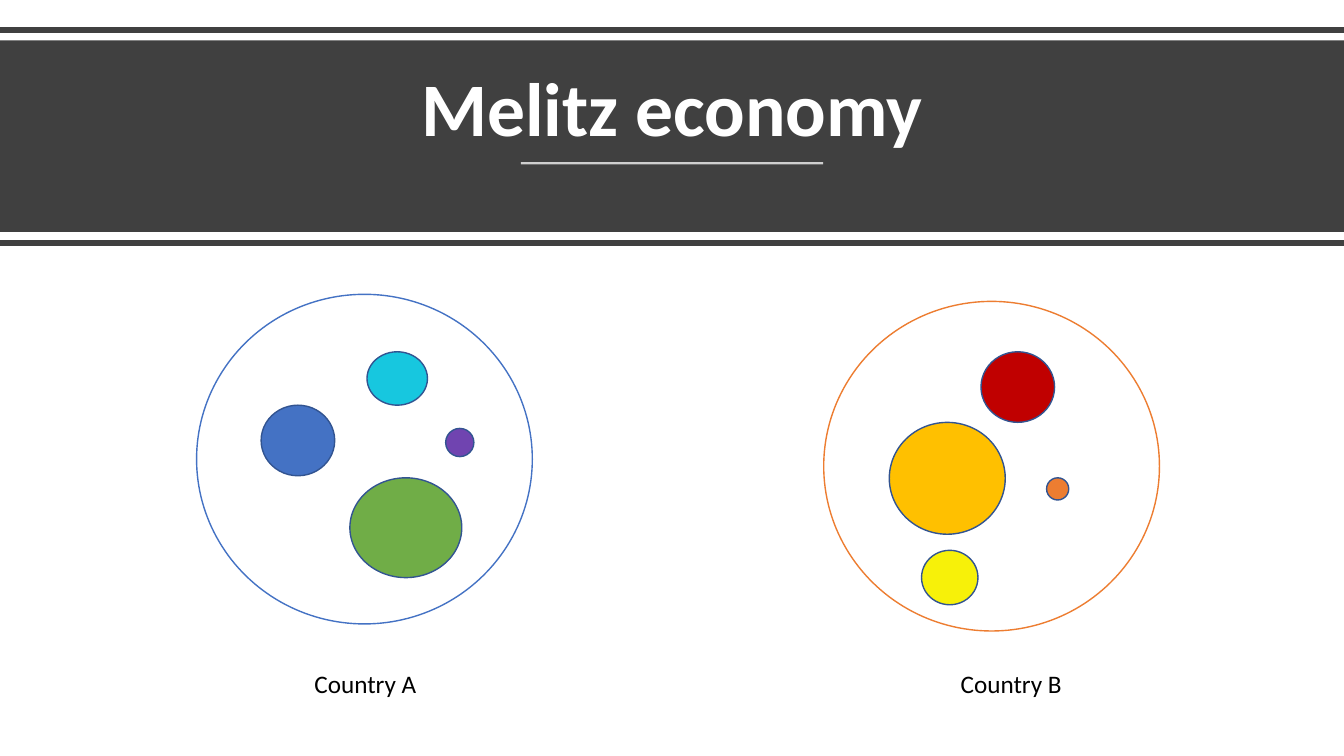
"""Build the Melitz economy slide: two countries with firms of different sizes."""
from lxml import etree
from pptx import Presentation
from pptx.dml.color import RGBColor
from pptx.enum.shapes import MSO_CONNECTOR, MSO_SHAPE
from pptx.enum.text import MSO_ANCHOR, PP_ALIGN
from pptx.oxml.ns import qn
from pptx.util import Inches, Pt

STRAIGHT = MSO_CONNECTOR.STRAIGHT
RECT, OVAL = MSO_SHAPE.RECTANGLE, MSO_SHAPE.OVAL
BOTTOM, TOP = MSO_ANCHOR.BOTTOM, MSO_ANCHOR.TOP
CENTER, LEFT = PP_ALIGN.CENTER, PP_ALIGN.LEFT

TITLE = "Melitz economy"
COUNTRIES = [
    {
        "label": "Country A", "label_left": 3.02,
        "border": (1.95, 2.92), "color": "4472C4",
        "firms": [
            (2.59, 4.02, 0.73, 0.7, "4472C4"),
            (3.64, 3.49, 0.6, 0.53, "17C7DF"),
            (3.47, 4.74, 1.11, 0.99, "70AD47"),
            (4.42, 4.25, 0.28, 0.28, "7044B0"),
        ],
    },
    {
        "label": "Country B", "label_left": 9.43,
        "border": (8.17, 2.99), "color": "ED7D31",
        "firms": [
            (8.82, 4.19, 1.15, 1.11, "FFC000"),
            (10.38, 4.74, 0.22, 0.22, "ED7D31"),
            (9.73, 3.49, 0.73, 0.7, "C00000"),
            (9.14, 5.46, 0.56, 0.54, "F7F109"),
        ],
    },
]
THEME = {
    "font": "Calibri", "title_size": 54, "label_size": 18,
    "band": "404040", "light": "FFFFFF", "text": "000000",
    "firm_line": "325491", "thin": 1, "rule": 1.5, "thick": 4,
}
WIDTH, HEIGHT = 13.33, 7.5
BAND_TOP, BAND_HEIGHT = 0.4, 1.9
EDGE_YS = (0.3, 2.41)
RULE_WIDTH, RULE_Y = 3, 1.62
BORDER_SIZE = (3.33, 3.27)
LABEL_TOP, LABEL_SIZE = 6.58, (2.07, 0.4)


def add_shape(s, kind, box, fill=None, line=None):
    sp = s.shapes.add_shape(kind, *map(Inches, box))
    sp.shadow.inherit = False
    if fill:
        sp.fill.solid()
        sp.fill.fore_color.rgb = RGBColor.from_string(fill)
    else:
        sp.fill.background()
    if line:
        sp.line.color.rgb = RGBColor.from_string(line)
        sp.line.width = Pt(THEME["thin"])
    else:
        sp.line.fill.background()


def add_line(s, left, right, y, color, width, opacity=None):
    cn = s.shapes.add_connector(STRAIGHT, *map(Inches, (left, y, right, y)))
    cn.line.color.rgb = RGBColor.from_string(color)
    cn.line.width = Pt(width)
    props = cn._element.spPr
    etree.SubElement(props, qn("a:effectLst"))
    if opacity:
        rgb = props.find(".//" + qn("a:srgbClr"))
        etree.SubElement(rgb, qn("a:alpha"), val=str(opacity * 1000))


def add_text(s, box, text, size, color, align=LEFT, anchor=TOP, bold=False):
    tf = s.shapes.add_textbox(*map(Inches, box)).text_frame
    tf.word_wrap = True
    tf.vertical_anchor = anchor
    tf.text = text
    p = tf.paragraphs[0]
    p.alignment = align
    font = p.runs[0].font
    font.name, font.size, font.bold = THEME["font"], Pt(size), bold
    font.color.rgb = RGBColor.from_string(color)
    return p


def add_header(s):
    add_shape(s, RECT, (0, BAND_TOP, WIDTH, BAND_HEIGHT), THEME["band"])
    for y in EDGE_YS:
        add_line(s, 0, WIDTH, y, THEME["band"], THEME["thick"])
    p = add_text(s, (0.23, 0.54, 12.87, 1.02), TITLE, THEME["title_size"],
                 THEME["light"], CENTER, BOTTOM, True)
    p.line_spacing = 0.9
    left = (WIDTH - RULE_WIDTH) / 2
    add_line(s, left, left + RULE_WIDTH, RULE_Y, THEME["light"], THEME["rule"], 75)


def add_country(s, country):
    for *box, color in country["firms"]:
        add_shape(s, OVAL, box, color, THEME["firm_line"])
    add_shape(s, OVAL, country["border"] + BORDER_SIZE, line=country["color"])
    add_text(s, (country["label_left"], LABEL_TOP) + LABEL_SIZE, country["label"],
             THEME["label_size"], THEME["text"])


def main():
    prs = Presentation()
    prs.slide_width, prs.slide_height = Inches(WIDTH), Inches(HEIGHT)
    s = prs.slides.add_slide(prs.slide_layouts[6])
    add_header(s)
    for country in COUNTRIES:
        add_country(s, country)
    prs.save("out.pptx")


if __name__ == "__main__":
    main()
